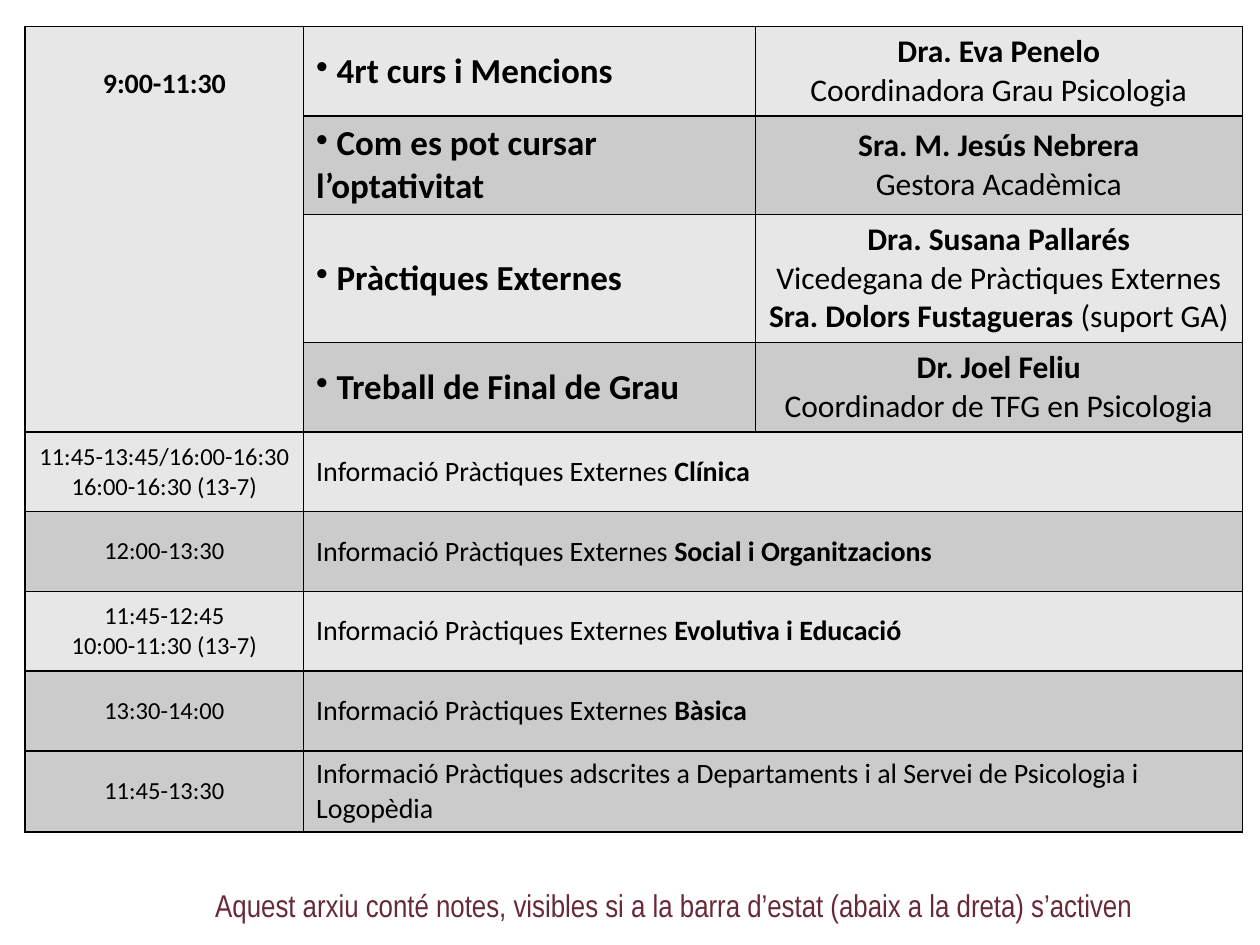
from lxml.etree import SubElement
from pptx import Presentation
from pptx.dml.color import RGBColor
from pptx.enum.shapes import MSO_SHAPE
from pptx.enum.text import MSO_ANCHOR, PP_ALIGN
from pptx.oxml.ns import qn
from pptx.util import Pt

LIGHT, DARK, BLACK = "E7E7E7", "CBCBCB", "000000"
MORNING = "9:00-11:30"
EXTERNAL = "Informació Pràctiques Externes "
TALKS = [
    ("4rt curs i Mencions", 51.12, LIGHT,
     [[("Dra. Eva Penelo", True)], [("Coordinadora Grau Psicologia", False)]]),
    ("Com es pot cursar l’optativitat", 53.28, DARK,
     [[("Sra. M. Jesús Nebrera", True)], [("Gestora Acadèmica", False)]]),
    ("Pràctiques Externes", 69.84, LIGHT,
     [[("Dra. Susana Pallarés", True)],
      [("Vicedegana de Pràctiques Externes", False)],
      [("Sra. Dolors Fustagueras ", True), ("(suport GA)", False)]]),
    ("Treball de Final de Grau", 51.12, DARK,
     [[("Dr. Joel Feliu", True)], [("Coordinador de TFG en Psicologia", False)]]),
]
SESSIONS = [
    (["11:45-13:45/16:00-16:30", "16:00-16:30 (13-7)"], LIGHT,
     [(EXTERNAL, False), ("Clínica", True)]),
    (["12:00-13:30"], DARK,
     [(EXTERNAL, False), ("Social i Organitzacions", True)]),
    (["11:45-12:45", "10:00-11:30 (13-7)"], LIGHT,
     [(EXTERNAL, False), ("Evolutiva i Educació", True)]),
    (["13:30-14:00"], DARK,
     [(EXTERNAL, False), ("Bàsica", True)]),
    (["11:45-13:30"], DARK,
     [("Informació Pràctiques adscrites a Departaments i al Servei de "
       "Psicologia i Logopèdia", False)]),
]
NOTICE = ("Aquest arxiu conté notes, visibles si a la barra d’estat "
          "(abaix a la dreta) s’activen")
COLUMN_WIDTHS = [159.12, 258.12, 278.28]
SESSION_HEIGHT = 45.6


def rgb(value):
    return RGBColor.from_string(value)


def write(frame, lines, size, font="Calibri", color=BLACK,
          align=PP_ALIGN.LEFT, bullet=None):
    for index, line in enumerate(lines):
        paragraph = frame.paragraphs[0] if index == 0 else frame.add_paragraph()
        paragraph.alignment = align
        if bullet:
            properties = paragraph._p.get_or_add_pPr()
            properties.set("marL", "0")
            properties.set("indent", "0")
            SubElement(properties, qn("a:buChar"), char=bullet)
        paragraph.font.size = Pt(size)
        for words, bold in line:
            run = paragraph.add_run()
            run.text = words
            run.font.size = Pt(size)
            run.font.name = font
            run.font.bold = bold
            run.font.color.rgb = rgb(color)


def style_cell(cell, fill):
    properties = cell._tc.get_or_add_tcPr()
    for side in ("a:lnL", "a:lnR", "a:lnT", "a:lnB"):
        border = SubElement(properties, qn(side), w=str(Pt(1)))
        SubElement(SubElement(border, qn("a:solidFill")), qn("a:srgbClr"), val=BLACK)
    cell.fill.solid()
    cell.fill.fore_color.rgb = rgb(fill)
    cell.vertical_anchor = MSO_ANCHOR.MIDDLE


def add_schedule(slide):
    heights = [talk[1] for talk in TALKS] + [SESSION_HEIGHT] * len(SESSIONS)
    fills = [talk[2] for talk in TALKS] + [session[1] for session in SESSIONS]
    schedule = slide.shapes.add_table(
        len(heights), len(COLUMN_WIDTHS), Pt(14.4), Pt(15.12),
        Pt(sum(COLUMN_WIDTHS)), Pt(sum(heights))).table
    schedule.first_row = schedule.horz_banding = False
    for column, width in zip(schedule.columns, COLUMN_WIDTHS):
        column.width = Pt(width)
    for index, (height, fill) in enumerate(zip(heights, fills)):
        schedule.rows[index].height = Pt(height)
        for column in range(len(COLUMN_WIDTHS)):
            style_cell(schedule.cell(index, column), LIGHT if column == 0 and index < len(TALKS) else fill)

    morning = schedule.cell(0, 0)
    morning.merge(schedule.cell(len(TALKS) - 1, 0))
    morning.vertical_anchor = MSO_ANCHOR.TOP
    morning.margin_top = Pt(23)
    write(morning.text_frame, [[(MORNING, True)]], 16, align=PP_ALIGN.CENTER)

    for row, (topic, _, _, speakers) in enumerate(TALKS):
        write(schedule.cell(row, 1).text_frame, [[(" " + topic, True)]], 20, bullet="•")
        write(schedule.cell(row, 2).text_frame, speakers, 18, align=PP_ALIGN.CENTER)

    for row, (times, _, subject) in enumerate(SESSIONS, len(TALKS)):
        write(schedule.cell(row, 0).text_frame, [[(time, False)] for time in times],
              14, align=PP_ALIGN.CENTER)
        schedule.cell(row, 1).merge(schedule.cell(row, 2))
        write(schedule.cell(row, 1).text_frame, [subject], 16)


def add_notice(slide):
    notice = slide.shapes.add_shape(
        MSO_SHAPE.RECTANGLE, Pt(115.92), Pt(502.56), Pt(604.08), Pt(28.8))
    notice.shadow.inherit = False
    notice.fill.solid()
    notice.fill.fore_color.rgb = rgb("FFFFFF")
    notice.line.fill.background()
    notice.text_frame.word_wrap = True
    notice.text_frame.vertical_anchor = MSO_ANCHOR.TOP
    write(notice.text_frame, [[(NOTICE, False)]], 18, font="Arial Narrow", color="682A37")


def main():
    deck = Presentation()
    deck.slide_width, deck.slide_height = Pt(720), Pt(540)
    slide = deck.slides.add_slide(deck.slide_layouts[6])
    add_schedule(slide)
    add_notice(slide)
    deck.save("out.pptx")


if __name__ == "__main__":
    main()
